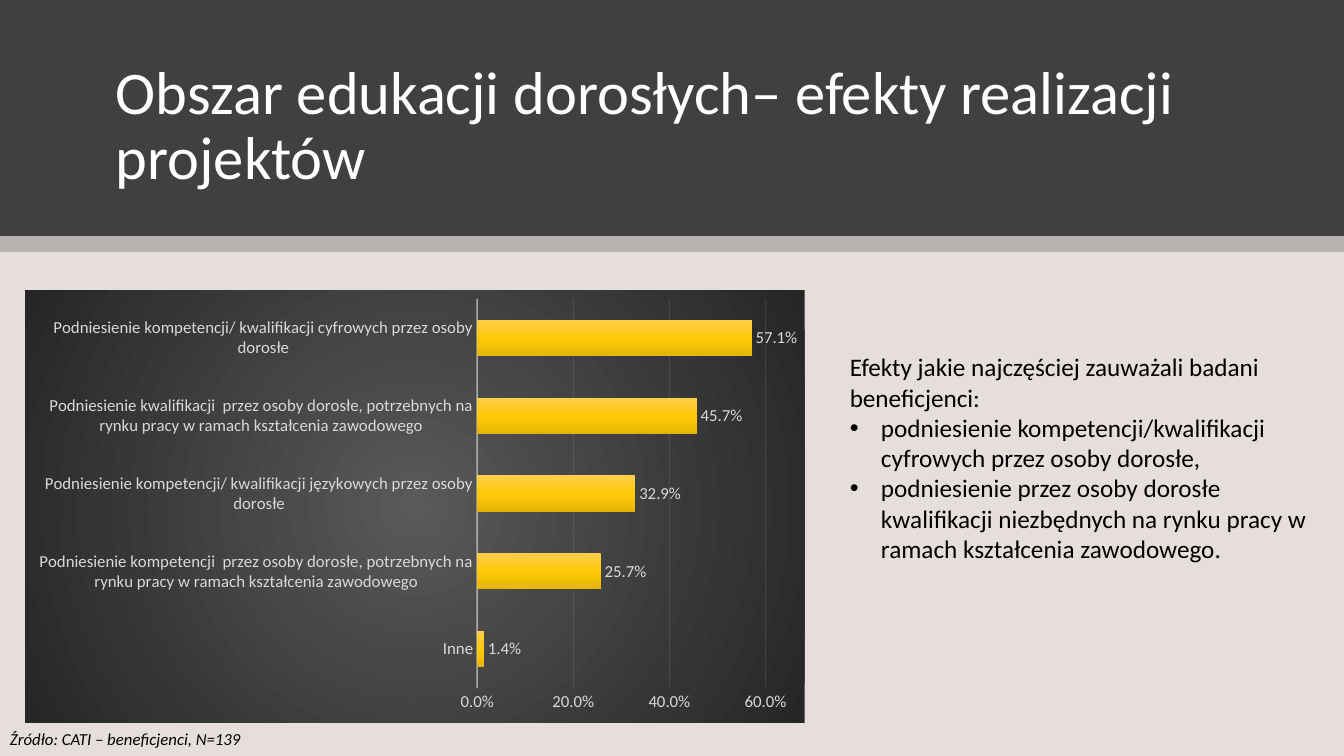
from dataclasses import dataclass

from lxml.etree import SubElement
from pptx import Presentation
from pptx.chart.data import CategoryChartData
from pptx.dml.color import RGBColor
from pptx.enum.chart import XL_CHART_TYPE, XL_LABEL_POSITION, XL_TICK_MARK
from pptx.enum.shapes import MSO_SHAPE
from pptx.enum.text import MSO_ANCHOR, PP_ALIGN
from pptx.oxml import parse_xml
from pptx.oxml.ns import nsdecls, qn
from pptx.util import Inches, Pt


@dataclass(frozen=True)
class Theme:
    """Colours, font and type sizes of the slide."""
    font: str = "Calibri"
    paper: str = "E5DEDB"
    header: str = "404040"
    ink: str = "000000"
    white: str = "FFFFFF"
    label: str = "D9D9D9"
    rule: str = "F2F2F2"
    panel: tuple = ((0, "595959"), (100, "262626"))
    bar: tuple = ((0, "FFCF4C"), (50, "FFCA08"), (100, "E5B505"))
    title_size: float = 43.2
    body_size: float = 18
    small_size: float = 12


THEME = Theme()

EFFECTS = (
    ("Inne", 0.014),
    ("Podniesienie kompetencji  przez osoby dorosłe, potrzebnych na rynku pracy "
     "w ramach kształcenia zawodowego", 0.257),
    ("Podniesienie kompetencji/ kwalifikacji językowych przez osoby dorosłe", 0.329),
    ("Podniesienie kwalifikacji  przez osoby dorosłe, potrzebnych na rynku pracy "
     "w ramach kształcenia zawodowego", 0.457),
    ("Podniesienie kompetencji/ kwalifikacji cyfrowych przez osoby dorosłe", 0.571),
)


def set_alpha(element, percent):
    """Make every RGB colour under an element partly transparent."""
    for color in element.iter(qn("a:srgbClr")):
        SubElement(color, qn("a:alpha")).set("val", str(percent * 1000))


def gradient(stops, direction):
    """Return a gradient fill element."""
    marks = "".join(f'<a:gs pos="{pos * 1000}"><a:srgbClr val="{rgb}"/></a:gs>'
                    for pos, rgb in stops)
    return parse_xml(f'<a:gradFill {nsdecls("a")} rotWithShape="1">'
                     f'<a:gsLst>{marks}</a:gsLst>{direction}</a:gradFill>')


def style_font(font, size, color):
    """Apply the theme font with a size and a colour."""
    font.name = THEME.font
    font.size = Pt(size)
    font.color.rgb = RGBColor.from_string(color)


def add_band(slide, top, height, color, alpha=100):
    """Add a full-width rectangle."""
    s = slide.shapes.add_shape(MSO_SHAPE.RECTANGLE, 0, Inches(top),
                               Inches(13.33), Inches(height))
    s.shadow.inherit = False
    s.fill.solid()
    s.fill.fore_color.rgb = RGBColor.from_string(color)
    s.line.fill.background()
    if alpha < 100:
        set_alpha(s.fill._xPr, alpha)


def add_text(slide, box, lines, size, color):
    """Add a wrapped text box and return its text frame."""
    tf = slide.shapes.add_textbox(*map(Inches, box)).text_frame
    tf.word_wrap = True
    tf.text = "\n".join(lines)
    for p in tf.paragraphs:
        style_font(p.runs[0].font, size, color)
    return tf


def add_bullet(p):
    """Give a paragraph a hanging bullet."""
    pPr = p._p.get_or_add_pPr()
    pPr.set("marL", str(Inches(0.31)))
    pPr.set("indent", str(-Inches(0.31)))
    SubElement(pPr, qn("a:buFont")).set("typeface", "Arial")
    SubElement(pPr, qn("a:buChar")).set("char", "•")


def style_line(line, width):
    """Colour a chart line."""
    line.color.rgb = RGBColor.from_string(THEME.rule)
    line.width = Pt(width)


def style_axes(chart):
    """Format both axes and the gridlines."""
    for axis in (chart.category_axis, chart.value_axis):
        axis.major_tick_mark = axis.minor_tick_mark = XL_TICK_MARK.NONE
        style_font(axis.tick_labels.font, THEME.small_size, THEME.label)
    cat, val = chart.category_axis, chart.value_axis
    style_line(cat.format.line, 1)
    set_alpha(cat._element.find(qn("c:spPr")), 54)
    val.minimum_scale, val.maximum_scale, val.major_unit = 0, 0.6, 0.2
    val.tick_labels.number_format = "0.0%"
    val.tick_labels.number_format_is_linked = False
    val.format.line.fill.background()
    style_line(val.major_gridlines.format.line, 0.75)
    set_alpha(val._element.find(qn("c:majorGridlines")), 10)


def set_plot_area(chart, x, y, w, h):
    """Fix the inner plot area as fractions of the chart."""
    area = chart._chartSpace.chart.plotArea
    for old in area.findall(qn("c:layout")):
        area.remove(old)
    places = "".join(f'<c:{tag} val="{value}"/>'
                     for tag, value in zip("xywh", (x, y, w, h)))
    area.insert(0, parse_xml(
        f'<c:layout {nsdecls("c")}><c:manualLayout><c:layoutTarget val="inner"/>'
        f'<c:xMode val="edge"/><c:yMode val="edge"/>{places}'
        '</c:manualLayout></c:layout>'))


def fill_panel(chart):
    """Fill the chart background with a radial gradient."""
    spPr = parse_xml(f'<c:spPr {nsdecls("c", "a")}/>')
    spPr.append(gradient(THEME.panel, '<a:path path="circle"><a:fillToRect '
                         'l="50000" t="50000" r="50000" b="50000"/></a:path>'))
    SubElement(SubElement(spPr, qn("a:ln")), qn("a:noFill"))
    chart._chartSpace.chart.addnext(spPr)


def add_effects_chart(slide, box):
    """Add the bar chart of observed effects."""
    data = CategoryChartData(number_format="0.0%")
    data.categories = [name for name, _ in EFFECTS]
    data.add_series("Series 1", [share for _, share in EFFECTS])
    chart = slide.shapes.add_chart(XL_CHART_TYPE.BAR_CLUSTERED,
                                   *map(Inches, box), data).chart
    chart.has_legend = chart.has_title = False
    style_font(chart.font, 10, THEME.ink)
    style_axes(chart)
    plot = chart.plots[0]
    plot.gap_width, plot.overlap, plot.vary_by_categories = 115, -20, False
    plot.has_data_labels = True
    labels = plot.data_labels
    labels.show_value = True
    labels.number_format, labels.number_format_is_linked = "0.0%", False
    labels.position = XL_LABEL_POSITION.OUTSIDE_END
    style_font(labels.font, THEME.small_size, THEME.label)
    bars = plot.series[0]
    bars.invert_if_negative = False
    bars._element.get_or_add_spPr().append(
        gradient(THEME.bar, '<a:lin ang="5400000" scaled="0"/>'))
    set_plot_area(chart, 0.58, 0.02, 0.37, 0.9)
    fill_panel(chart)


def main():
    """Build and save the slide."""
    prs = Presentation()
    prs.slide_width, prs.slide_height = Inches(13.33), Inches(7.5)
    slide = prs.slides.add_slide(prs.slide_layouts[6])
    add_band(slide, 0, 7.5, THEME.paper)
    add_band(slide, 0, 2.34, THEME.header)
    title = add_text(slide, (1.05, 0.47, 11.24, 1.49),
                     ["Obszar edukacji dorosłych– efekty realizacji projektów"],
                     THEME.title_size, THEME.white)
    title.vertical_anchor = MSO_ANCHOR.BOTTOM
    title.paragraphs[0].line_spacing = 0.9
    add_band(slide, 2.34, 0.16, THEME.ink, 20)
    findings = add_text(slide, (8.33, 3.44, 4.76, 2.22), [
        "Efekty jakie najczęściej zauważali badani beneficjenci:",
        "podniesienie kompetencji/kwalifikacji cyfrowych przez osoby dorosłe,",
        "podniesienie przez osoby dorosłe kwalifikacji niezbędnych na rynku pracy "
        "w ramach kształcenia zawodowego."], THEME.body_size, THEME.ink)
    for p in findings.paragraphs[1:]:
        add_bullet(p)
    p = add_text(slide, (0, 7.17, 6.18, 0.31), ["Źródło: CATI – beneficjenci, N=139"],
                 THEME.small_size, THEME.ink).paragraphs[0]
    p.alignment, p.line_spacing = PP_ALIGN.JUSTIFY, 1.07
    p.runs[0].font.italic = True
    add_effects_chart(slide, (0.25, 2.88, 7.73, 4.29))
    prs.save("out.pptx")


if __name__ == "__main__":
    main()
